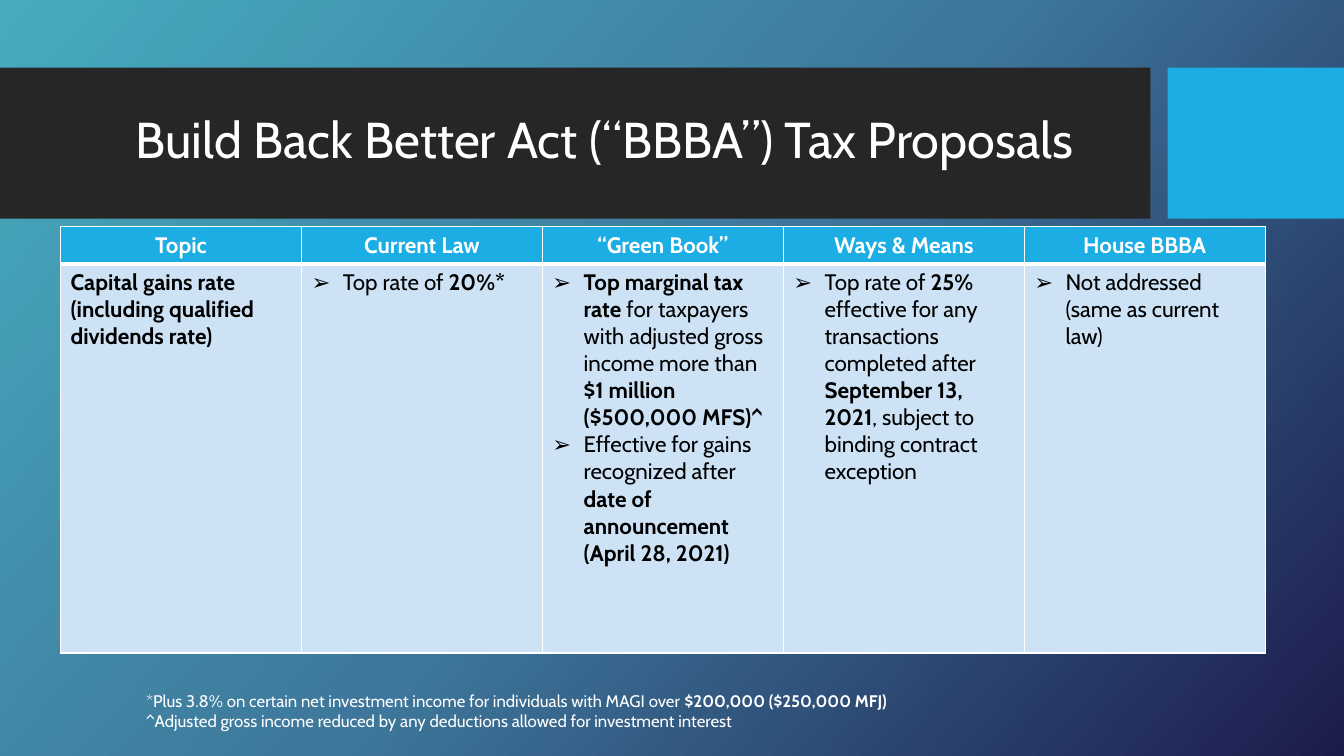
from copy import deepcopy

from lxml import etree
from pptx import Presentation
from pptx.dml.color import RGBColor
from pptx.enum.shapes import MSO_SHAPE
from pptx.enum.text import MSO_ANCHOR, MSO_AUTO_SIZE, PP_ALIGN
from pptx.oxml import parse_xml
from pptx.oxml.ns import nsdecls, qn
from pptx.util import Inches, Pt

RECTANGLE = MSO_SHAPE.RECTANGLE
MIDDLE = MSO_ANCHOR.MIDDLE
FIT_SHAPE = MSO_AUTO_SIZE.SHAPE_TO_FIT_TEXT
CENTER, LEFT = PP_ALIGN.CENTER, PP_ALIGN.LEFT
FONT = "Cabin"
WHITE, BLACK, BLUE, PALE_BLUE, CHARCOAL = "FFFFFF", "000000", "1CADE4", "CDE3F5", "262626"


def color(value):
    return RGBColor.from_string(value)


def add_spans(para, spans, size, ink):
    for text, bold in spans:
        span = para.add_run()
        span.text = text
        span.font.name = FONT
        span.font.size = Pt(size)
        span.font.bold = bold
        span.font.color.rgb = color(ink)


deck = Presentation()
deck.slide_width = Inches(13.33)
deck.slide_height = Inches(7.5)
page = deck.slides.add_slide(deck.slide_layouts[5])

backdrop = page.background.fill
backdrop.gradient()
backdrop.gradient_angle = 318
first_stop = page._element.xpath(".//p:bg//a:gs")[0]
first_stop.addnext(deepcopy(first_stop))
stops = [(0, "46ACBE"), (0.5, "3E779B"), (1, "1C1C4C")]
for stop, (position, value) in zip(backdrop.gradient_stops, stops):
    stop.position = position
    stop.color.rgb = color(value)

for left, width, value in [(0, 11.41, CHARCOAL), (11.58, 1.75, BLUE)]:
    band = page.shapes.add_shape(RECTANGLE, Inches(left), Inches(0.67), Inches(width), Inches(1.5))
    band.shadow.inherit = False
    band.fill.solid()
    band.fill.fore_color.rgb = color(value)
    band.line.fill.background()

title = page.shapes.title
page.shapes._spTree.append(title._element)
title.left, title.top = Inches(0.74), Inches(0.82)
title.width, title.height = Inches(10.51), Inches(1.18)
title.text_frame.word_wrap = True
title.text_frame.vertical_anchor = MIDDLE
title_para = title.text_frame.paragraphs[0]
title_para.alignment = CENTER
title_para.line_spacing = 0.9
add_spans(title_para, [("Build Back Better Act (“BBBA”) Tax Proposals", False)], 36, WHITE)

headings = ["Topic", "Current Law", "“Green Book”", "Ways & Means", "House BBBA"]
details = [
    [[("Capital gains rate (including qualified dividends rate)", True)]],
    [[("Top rate of ", False), ("20%*", True)]],
    [
        [
            ("Top marginal tax rate", True),
            (" for taxpayers with adjusted gross income more than ", False),
            ("$1 million ($500,000 MFS)^", True),
        ],
        [
            ("Effective for gains recognized after ", False),
            ("date of announcement (April 28, 2021)", True),
        ],
    ],
    [
        [
            ("Top rate of ", False),
            ("25%", True),
            (" effective for any transactions completed after ", False),
            ("September 13, 2021", True),
            (", subject to binding contract exception", False),
        ]
    ],
    [[("Not addressed (same as current law)", False)]],
]
rows = [[[[(heading, True)]] for heading in headings], details]
row_styles = [
    (0.35, BLUE, WHITE, CENTER, {"L": 1, "R": 1, "T": 1, "B": 3}),
    (3.86, PALE_BLUE, BLACK, LEFT, {"L": 1, "R": 1, "T": 3, "B": 1}),
]

table = page.shapes.add_table(
    2, len(headings), Inches(0.6), Inches(2.25), Inches(11.95), Inches(4.21)
).table
for column in table.columns:
    column.width = Inches(2.39)

for row_index, (row, style) in enumerate(zip(rows, row_styles)):
    height, fill, ink, alignment, borders = style
    table.rows[row_index].height = Inches(height)
    for column_index, paragraphs in enumerate(row):
        cell = table.cell(row_index, column_index)
        cell_properties = cell._tc.get_or_add_tcPr()
        for side, weight in borders.items():
            cell_properties.append(parse_xml(
                f'<a:ln{side} {nsdecls("a")} w="{Pt(weight)}"><a:solidFill>'
                f'<a:srgbClr val="{WHITE}"/></a:solidFill></a:ln{side}>'
            ))
        cell.fill.solid()
        cell.fill.fore_color.rgb = color(fill)
        for index, spans in enumerate(paragraphs):
            para = cell.text_frame.paragraphs[0] if index == 0 else cell.text_frame.add_paragraph()
            para.alignment = alignment
            if row_index == 1 and column_index > 0:
                properties = para._p.get_or_add_pPr()
                properties.set("marL", str(Inches(0.31)))
                properties.set("indent", str(-Inches(0.31)))
                etree.SubElement(properties, qn("a:buFont"), typeface="Arial")
                etree.SubElement(properties, qn("a:buChar"), char="➢")
            add_spans(para, spans, 16, ink)

footnotes = [
    [
        ("*Plus 3.8% on certain net investment income for individuals with MAGI over ", False),
        ("$200,000 ($250,000 MFJ)", True),
    ],
    [("^Adjusted gross income reduced by any deductions allowed for investment interest", False)],
]
footnote_box = page.shapes.add_textbox(Inches(1.35), Inches(6.8), Inches(7.95), Inches(0.5))
frame = footnote_box.text_frame
frame.word_wrap = False
frame.auto_size = FIT_SHAPE
for index, spans in enumerate(footnotes):
    para = frame.paragraphs[0] if index == 0 else frame.add_paragraph()
    add_spans(para, spans, 12, WHITE)

deck.save("out.pptx")
